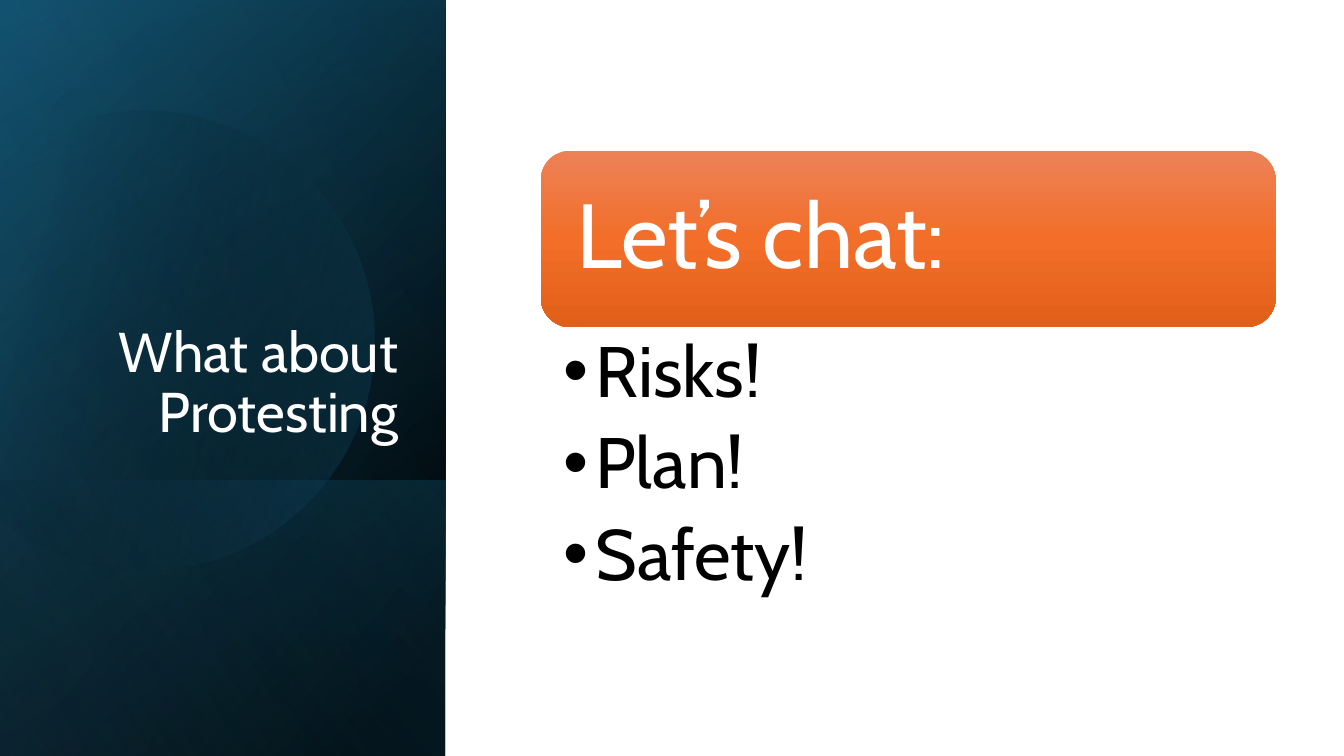
from dataclasses import dataclass
from math import cos, radians, sin

from lxml.etree import SubElement
from pptx import Presentation
from pptx.dml.color import RGBColor
from pptx.enum.shapes import MSO_SHAPE as Preset
from pptx.enum.text import MSO_ANCHOR as Anchor, PP_ALIGN as Align
from pptx.oxml.ns import qn
from pptx.util import Pt

FONT = "Cabin"
BULLET_FONT = "Arial"
COLORS = {
    "black": "000000",
    "white": "FFFFFF",
    "navy": "104862",
    "teal": "156082",
    "sky": "46B1E1",
    "orange_light": "ED8257",
    "orange": "F26E29",
    "orange_dark": "E25F1A",
}


@dataclass(frozen=True)
class Stop:
    position: int
    color: str
    opacity: int = 100


@dataclass(frozen=True)
class Box:
    left: float
    top: float
    width: float
    height: float

    def lengths(self) -> list:
        return [Pt(v) for v in (self.left, self.top, self.width, self.height)]

    def quarter_turned(self) -> "Box":
        shift = (self.width - self.height) / 2
        return Box(self.left + shift, self.top - shift, self.height, self.width)


@dataclass(frozen=True)
class Layer:
    area: Box
    angle: int
    stops: tuple


@dataclass(frozen=True)
class Copy:
    lines: tuple
    area: Box
    size: int
    color: str
    insets: tuple
    anchor: Anchor
    align: Align = Align.LEFT
    space_after: float = 0
    bullet_indent: float = 0


SIDEBAR = Box(0, 0, 318.24, 540)
SIDEBAR_FOOT = Box(0, 343, 318.24, 197)
BANNER = Box(386.3, 107.6, 524.88, 126)

LAYERS_BELOW_DISC = (
    Layer(SIDEBAR, 50, (Stop(8, "black"), Stop(100, "navy"))),
    Layer(SIDEBAR, 30, (Stop(0, "black", 0), Stop(99, "teal", 46))),
    Layer(SIDEBAR_FOOT, 130, (Stop(2, "teal", 29), Stop(100, "black", 30))),
)
SHEEN = Layer(SIDEBAR, 120, (Stop(0, "black", 0), Stop(99, "sky", 11)))
DISC_STOPS = (Stop(29, "black", 0), Stop(100, "teal", 43))
BANNER_STOPS = (Stop(0, "orange_light"), Stop(50, "orange"), Stop(100, "orange_dark"))

COPIES = (
    Copy(("What about Protesting",), Box(45.9, 132.48, 245.52, 188.64), 40, "white",
         (7.2, 3.6, 7.2, 3.6), Anchor.BOTTOM, align=Align.RIGHT),
    Copy(("Let’s chat:",), Box(392.4, 113.76, 512.64, 113.76), 65, "white",
         (19.44, 19.44, 19.44, 19.44), Anchor.MIDDLE),
    Copy(("Risks!", "Plan!", "Safety!"), Box(386.3, 233.28, 524.88, 206.64), 51, "black",
         (16.56, 6.48, 36.72, 6.48), Anchor.TOP, space_after=10.2, bullet_indent=22.5),
)


def paint(shape, angle: int, stops: tuple) -> None:
    shape.shadow.inherit = False
    shape.line.fill.background()
    shape.fill.gradient()
    gradient = shape._element.spPr.find(qn("a:gradFill"))
    stop_list = gradient.find(qn("a:gsLst"))
    for default_stop in list(stop_list):
        stop_list.remove(default_stop)
    for stop in stops:
        entry = SubElement(stop_list, qn("a:gs"), pos=str(stop.position * 1000))
        color = SubElement(entry, qn("a:srgbClr"), val=COLORS[stop.color])
        if stop.opacity < 100:
            SubElement(color, qn("a:alpha"), val=str(stop.opacity * 1000))
    direction = gradient.find(qn("a:lin"))
    direction.set("ang", str(angle * 60000))
    direction.set("scaled", "0")


def draw_layer(slide, layer: Layer) -> None:
    panel = slide.shapes.add_shape(Preset.RECTANGLE, *layer.area.quarter_turned().lengths())
    panel.rotation = 90
    panel._element.spPr.find(qn("a:xfrm")).set("flipH", "1")
    paint(panel, layer.angle, layer.stops)


def draw_disc(slide) -> None:
    center_x, center_y, radius = 102.7, 240.2, 164.2
    start, sweep = 242.1, 268
    angles = [radians(a) for a in (start, 270, 360, 450, start + sweep)]
    rim = [(Pt(center_x + radius * cos(a)), Pt(center_y + radius * sin(a))) for a in angles]
    builder = slide.shapes.build_freeform(*rim[0])
    builder.add_line_segments(rim[1:], close=True)
    disc = builder.convert_to_shape()
    outline = next(disc._element.iter(qn("a:path")))
    for segment in outline.findall(qn("a:lnTo")):
        outline.remove(segment)
    arc = SubElement(outline, qn("a:arcTo"), wR=str(Pt(radius)), hR=str(Pt(radius)),
                     stAng=str(round(start * 60000)), swAng=str(sweep * 60000))
    outline.find(qn("a:close")).addprevious(arc)
    disc.rotation = 343.9
    paint(disc, 30, DISC_STOPS)


def draw_banner(slide) -> None:
    banner = slide.shapes.add_shape(Preset.ROUNDED_RECTANGLE, *BANNER.lengths())
    paint(banner, 90, BANNER_STOPS)


def write(slide, copy: Copy) -> None:
    frame = slide.shapes.add_textbox(*copy.area.lengths()).text_frame
    frame.word_wrap = True
    frame.vertical_anchor = copy.anchor
    (frame.margin_left, frame.margin_top,
     frame.margin_right, frame.margin_bottom) = (Pt(v) for v in copy.insets)
    frame.text = "\n".join(copy.lines)
    for paragraph in frame.paragraphs:
        paragraph.alignment = copy.align
        paragraph.line_spacing = 0.9
        paragraph.space_after = Pt(copy.space_after)
        if copy.bullet_indent:
            paragraph.level = 1
            properties = paragraph._p.get_or_add_pPr()
            properties.set("marL", str(Pt(copy.bullet_indent)))
            properties.set("indent", str(-Pt(copy.bullet_indent)))
            SubElement(properties, qn("a:buFont"), typeface=BULLET_FONT)
            SubElement(properties, qn("a:buChar"), char="•")
        paragraph.font.name = FONT
        paragraph.font.size = Pt(copy.size)
        paragraph.font.color.rgb = RGBColor.from_string(COLORS[copy.color])


def main() -> None:
    deck = Presentation()
    deck.slide_width, deck.slide_height = Pt(960), Pt(540)
    slide = deck.slides.add_slide(deck.slide_layouts[6])
    for layer in LAYERS_BELOW_DISC:
        draw_layer(slide, layer)
    draw_disc(slide)
    draw_layer(slide, SHEEN)
    draw_banner(slide)
    for copy in COPIES:
        write(slide, copy)
    deck.save("out.pptx")


if __name__ == "__main__":
    main()
